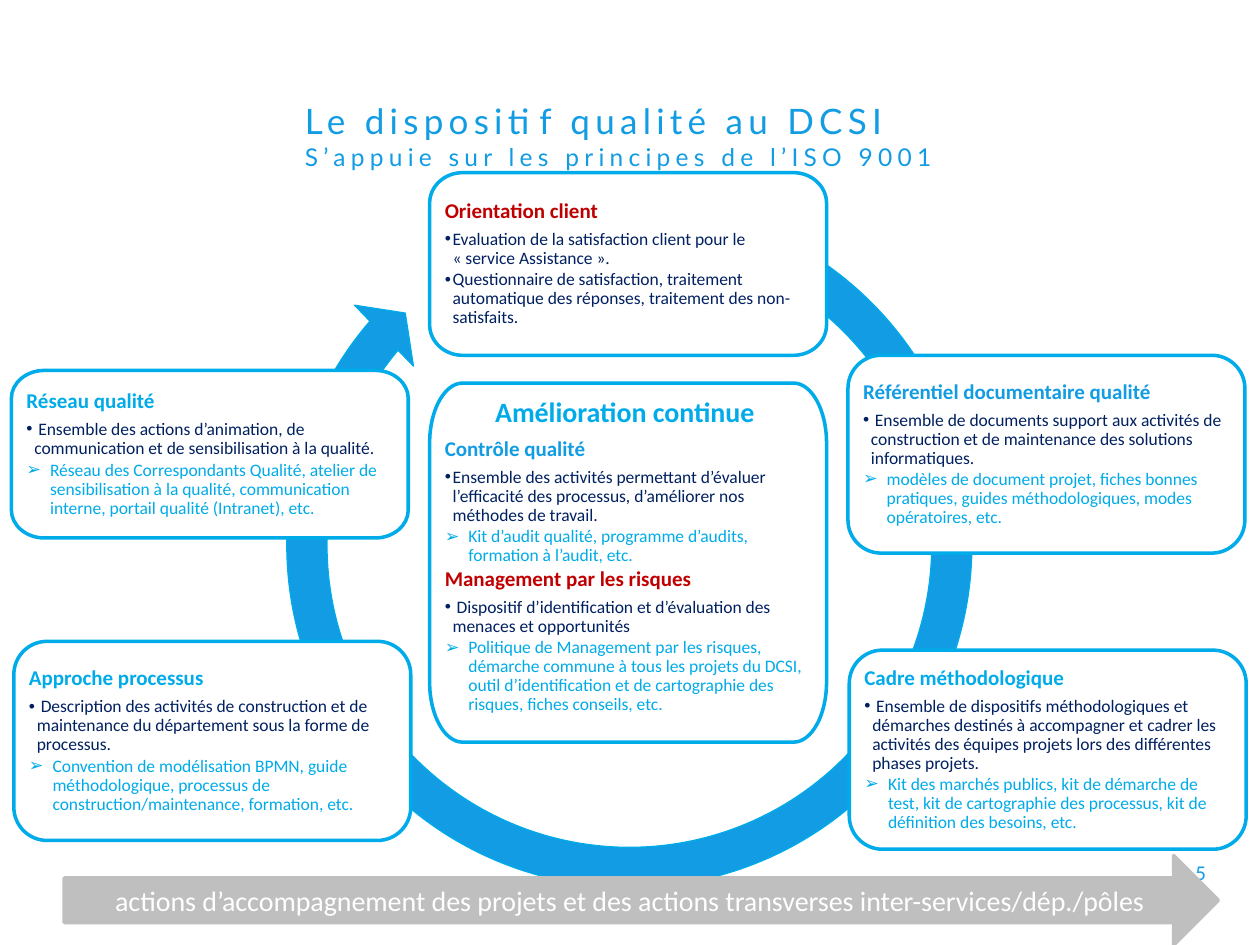
from lxml import etree
from pptx import Presentation
from pptx.dml.color import RGBColor
from pptx.enum.shapes import MSO_SHAPE
from pptx.enum.text import MSO_ANCHOR, PP_ALIGN
from pptx.oxml.ns import qn
from pptx.util import Inches, Pt

TOP, MIDDLE = MSO_ANCHOR.TOP, MSO_ANCHOR.MIDDLE
LEFT, CENTER, RIGHT = PP_ALIGN.LEFT, PP_ALIGN.CENTER, PP_ALIGN.RIGHT
BLUE, CYAN, NAVY, RED = "129CE3", "00ABE9", "002060", "C00000"
WHITE, GREY = "FFFFFF", "BFBFBF"
BOX_W = 3.15
CURVE = 0.55  # share of the corner radius covered by a Bézier handle
NBSP = chr(160)

# paragraph kind: size, bold, space after (share of size), bullet, indent in points
STYLES = {
    "main": (16, True, 0.35, None, 0),
    "head": (12, True, 0.35, None, 0),
    "dot": (10, False, 0.15, "•", 4.5),
    "arrow": (10, False, 0.15, "➢", 13.5),
}

# left, top, height, anchor, paragraphs (kind, colour, text)
BOXES = [
    (3.41, 1.37, 1.45, MIDDLE, [
        ("head", RED, "Orientation client"),
        ("dot", NAVY, "Evaluation de la satisfaction client pour le "
                      f"«{NBSP}service Assistance{NBSP}»."),
        ("dot", NAVY, "Questionnaire de satisfaction, traitement automatique des réponses, "
                      "traitement des non-satisfaits."),
    ]),
    (6.73, 2.82, 1.57, MIDDLE, [
        ("head", BLUE, "Référentiel documentaire qualité"),
        ("dot", NAVY, " Ensemble de documents support aux activités de construction et de "
                      "maintenance des solutions informatiques."),
        ("arrow", CYAN, "modèles de document projet, fiches bonnes pratiques, guides "
                        "méthodologiques, modes opératoires, etc."),
    ]),
    (0.09, 2.94, 1.33, MIDDLE, [
        ("head", CYAN, "Réseau qualité"),
        ("dot", NAVY, " Ensemble des actions d’animation, de communication et de "
                      "sensibilisation à la qualité."),
        ("arrow", CYAN, "Réseau des Correspondants Qualité, atelier de sensibilisation à la "
                        "qualité, communication interne, portail qualité (Intranet), etc."),
    ]),
    (0.11, 5.09, 1.58, MIDDLE, [
        ("head", CYAN, "Approche processus"),
        ("dot", NAVY, " Description des activités de construction et de maintenance du "
                      "département sous la forme de processus."),
        ("arrow", CYAN, "Convention de modélisation BPMN, guide méthodologique, processus de "
                        "construction/maintenance, formation, etc."),
    ]),
    (3.41, 3.04, 2.85, TOP, [
        ("main", CYAN, "Amélioration continue "),
        ("head", BLUE, "Contrôle qualité"),
        ("dot", NAVY, "Ensemble des activités permettant d’évaluer l’efficacité des "
                      "processus, d’améliorer nos méthodes de travail."),
        ("arrow", CYAN, "Kit d’audit qualité, programme d’audits, formation à l’audit, etc."),
        ("head", RED, "Management par les risques"),
        ("dot", NAVY, " Dispositif d’identification et d’évaluation des menaces et opportunités"),
        ("arrow", CYAN, "Politique de Management par les risques, démarche commune à tous les "
                        "projets du DCSI, outil d’identification et de cartographie des "
                        "risques, fiches conseils, etc."),
    ]),
    (6.74, 5.16, 1.58, MIDDLE, [
        ("head", CYAN, "Cadre méthodologique"),
        ("dot", NAVY, " Ensemble de dispositifs méthodologiques et démarches destinés à "
                      "accompagner et cadrer les activités des équipes projets lors des "
                      "différentes phases projets."),
        ("arrow", CYAN, "Kit des marchés publics, kit de démarche de test, kit de "
                        "cartographie des processus, kit de définition des besoins, etc."),
    ]),
]


def rgb(value):
    return RGBColor.from_string(value)


def set_font(font, size, color, name="Calibri", bold=False):
    font.name, font.size, font.bold = name, Pt(size), bold
    font.color.rgb = rgb(color)


def paint(sp, fill, line, width):
    sp.shadow.inherit = False
    sp.fill.solid()
    sp.fill.fore_color.rgb = rgb(fill)
    sp.line.color.rgb = rgb(line)
    sp.line.width = Pt(width)


def set_bullet(p, char, indent):
    pPr = p._p.get_or_add_pPr()
    pPr.set("marL", str(Pt(indent)))
    pPr.set("indent", str(-Pt(indent)))
    etree.SubElement(pPr, qn("a:buFont")).set("typeface", "Arial")
    etree.SubElement(pPr, qn("a:buChar")).set("char", char)


def write(p, kind, color, text):
    size, bold, after, bullet, indent = STYLES[kind]
    p.text = text
    p.alignment = CENTER if kind == "main" else LEFT
    p.line_spacing = 0.9
    p.space_after = Pt(after * size)
    if bullet:
        p.level = 1
        set_bullet(p, bullet, indent)
    set_font(p.runs[0].font, size, color, bold=bold)


def build_rounded(s, x, y, w, h):
    """Box whose four elliptical corners are w/12 wide and h/6 high."""
    x, y, w, h = map(Inches, (x, y, w, h))
    rx, ry = w // 12, h // 6
    points = [(0, ry), (rx, 0), (w - rx, 0), (w, ry),
              (w, h - ry), (w - rx, h), (rx, h), (0, h - ry)]
    builder = s.shapes.build_freeform(x, y + ry)
    builder.add_line_segments([(x + px, y + py) for px, py in points[1:]], close=True)
    sp = builder.convert_to_shape()
    segments = list(sp._element.iter(qn("a:lnTo")))
    for i, corner in enumerate([(0, 0), (w, 0), (w, h), (0, h)]):
        segment = segments[2 * i]
        curve = etree.Element(qn("a:cubicBezTo"))
        for end in points[2 * i:2 * i + 2]:
            pt = etree.SubElement(curve, qn("a:pt"))
            for axis, e, c in zip("xy", end, corner):
                pt.set(axis, str(round(e + CURVE * (c - e))))
        curve.append(segment[0])
        segment.getparent().replace(segment, curve)
    return sp


def add_box(s, left, top, height, anchor, paragraphs):
    sp = build_rounded(s, left, top, BOX_W, height)
    paint(sp, WHITE, CYAN, 2)
    tf = sp.text_frame
    tf.word_wrap = True
    tf.vertical_anchor = anchor
    tf.margin_left = tf.margin_right = tf.margin_top = tf.margin_bottom = Inches(0.12)
    for i, item in enumerate(paragraphs):
        write(tf.add_paragraph() if i else tf.paragraphs[0], *item)


def add_title(s):
    sp = s.shapes.title
    sp.left, sp.top, sp.width, sp.height = map(Inches, (2.32, 0.74, 7.36, 0.62))
    tf = sp.text_frame
    tf.text = "Le dispositif qualité au DCSI\vS’appuie sur les principes de l’ISO 9001"
    tf.vertical_anchor = TOP
    p = tf.paragraphs[0]
    p.alignment = LEFT
    for r, size in zip(p.runs, (20, 14)):
        set_font(r.font, size, BLUE, "Lato")
        r.font._element.set("spc", "300")


def add_cycle(s):
    sp = s.shapes.add_shape(MSO_SHAPE.CIRCULAR_ARROW, *map(Inches, (2.1, 1.43, 5.79, 5.79)))
    sp.rotation = 351.2
    # angles are stored in 60000ths of a degree, over 100000
    for i, value in enumerate((5.5 / 100, 5.51 * 0.6, 229.26 * 0.6, 289.98 * 0.6, 5.8 / 100)):
        sp.adjustments[i] = value
    paint(sp, BLUE, CYAN, 0.75)


def add_line_of_text(sp, text, size, color, align):
    tf = sp.text_frame
    tf.word_wrap = True
    tf.vertical_anchor = MIDDLE
    p = tf.paragraphs[0]
    p.text = text
    p.alignment = align
    set_font(p.runs[0].font, size, color)


def add_support_arrow(s):
    sp = s.shapes.add_shape(MSO_SHAPE.RIGHT_ARROW, *map(Inches, (0.51, 6.79, 9.16, 0.71)))
    paint(sp, GREY, GREY, 2)
    add_line_of_text(sp, "actions d’accompagnement des projets et des actions transverses "
                         "inter-services/dép./pôles", 16, WHITE, CENTER)


def main():
    prs = Presentation()
    prs.slide_width, prs.slide_height = Inches(10), Inches(7.5)
    s = prs.slides.add_slide(prs.slide_layouts[5])
    add_cycle(s)
    add_title(s)
    number = s.shapes.add_textbox(*map(Inches, (7.92, 6.76, 1.75, 0.33)))
    add_line_of_text(number, "5", 12, BLUE, RIGHT)
    for box in BOXES:
        add_box(s, *box)
    add_support_arrow(s)
    prs.save("out.pptx")


if __name__ == "__main__":
    main()
